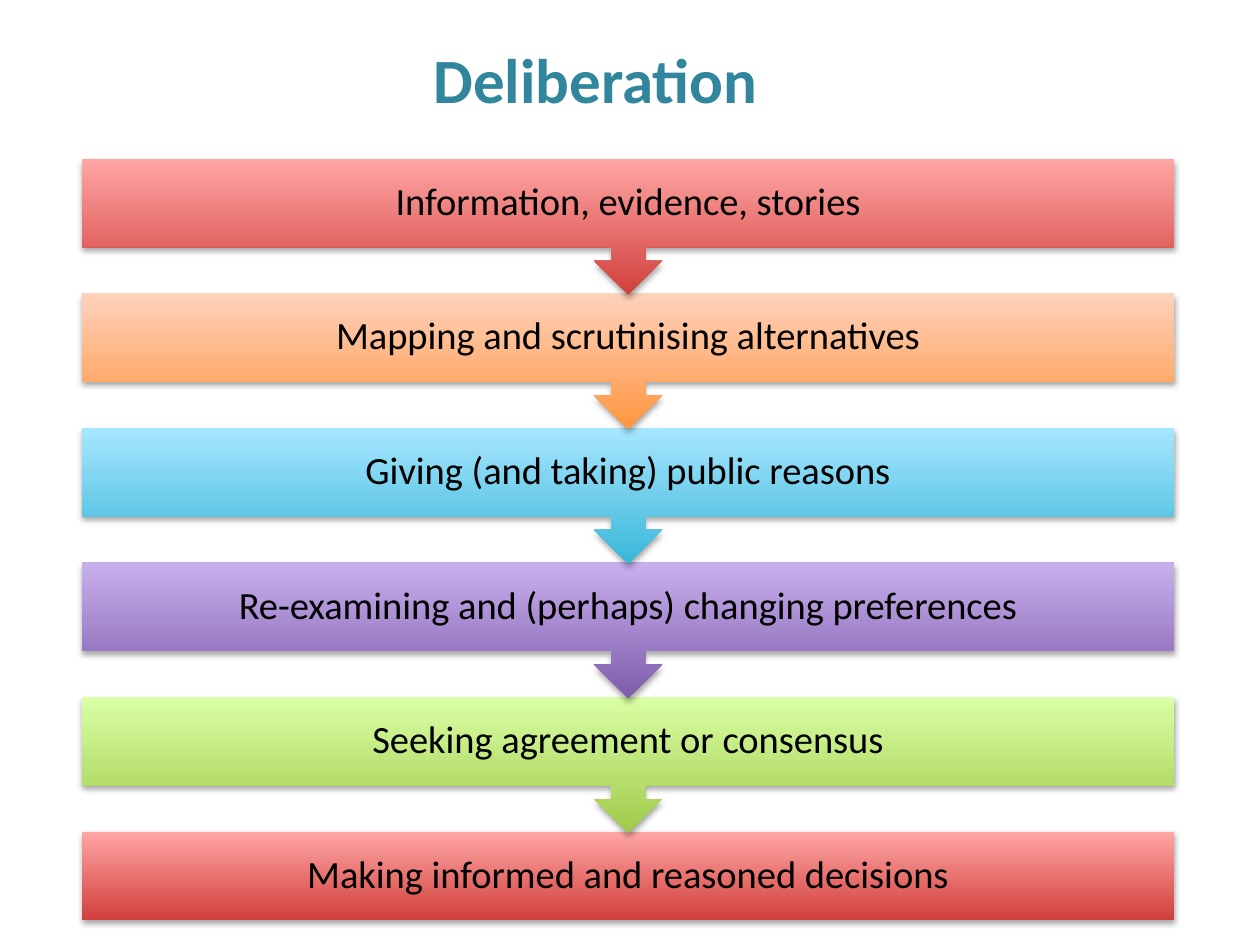
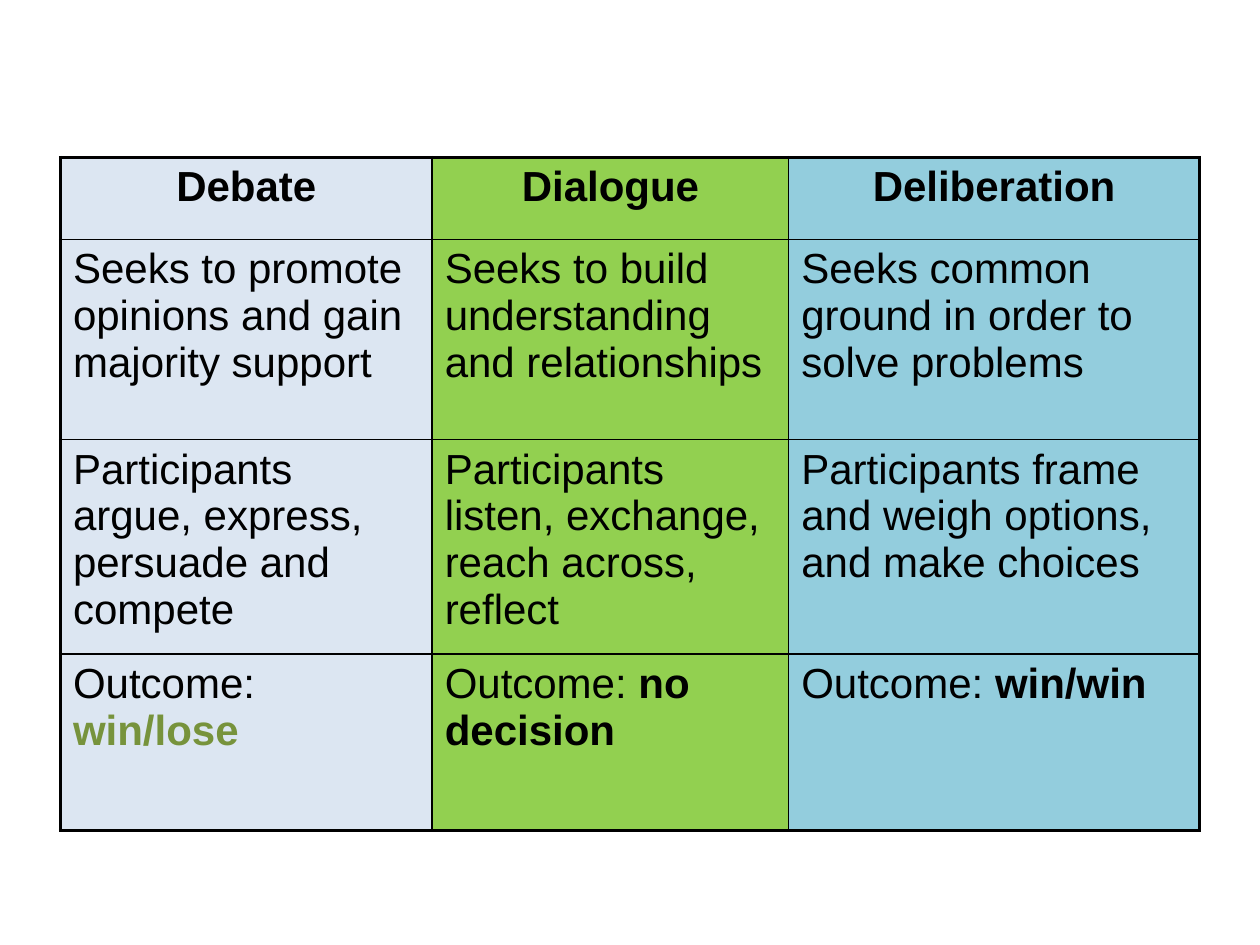
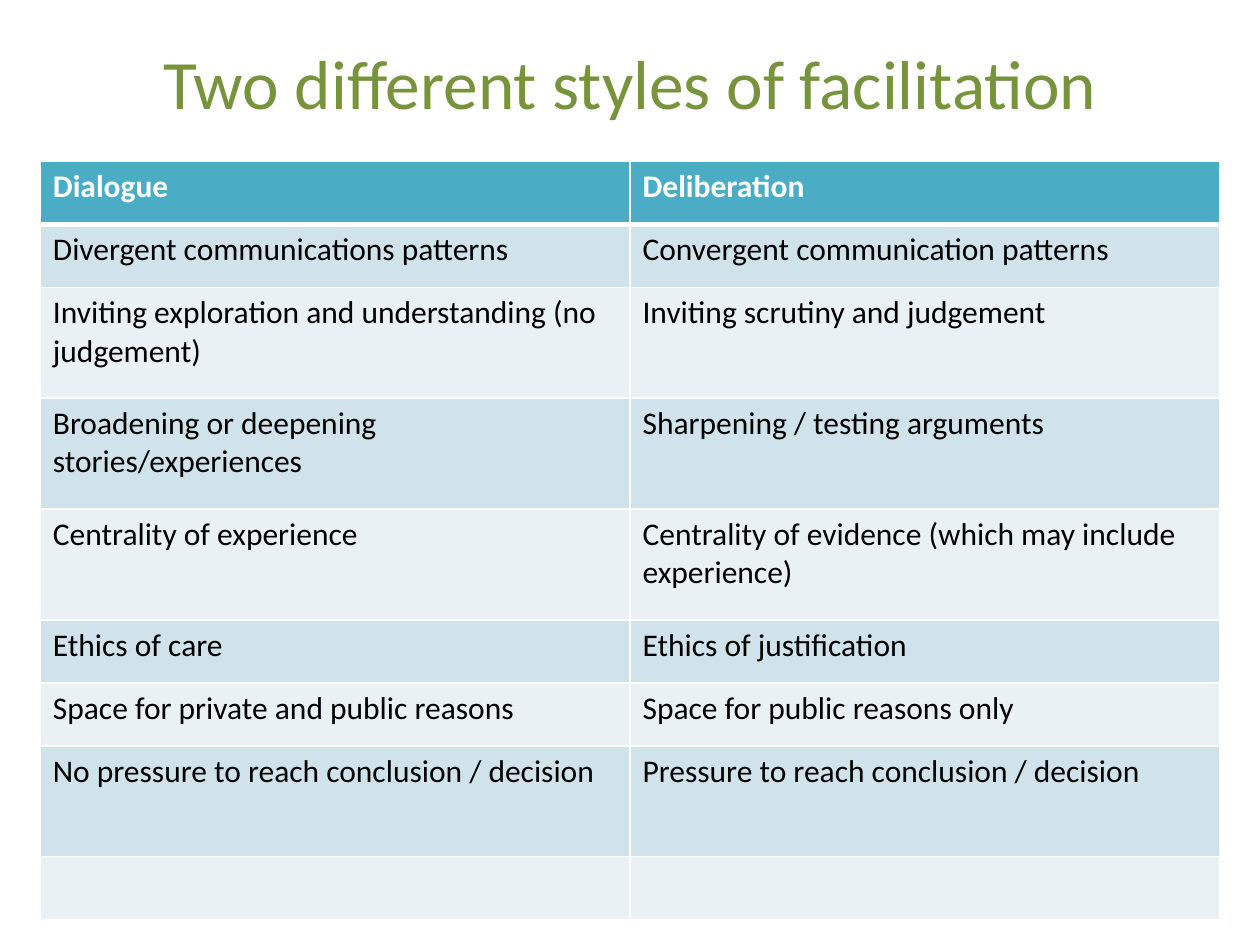
from dataclasses import dataclass

from lxml.etree import SubElement
from pptx import Presentation
from pptx.dml.color import RGBColor
from pptx.enum.shapes import MSO_SHAPE
from pptx.enum.text import MSO_ANCHOR, PP_ALIGN
from pptx.oxml import parse_xml
from pptx.oxml.ns import nsdecls, qn
from pptx.util import Inches, Pt


@dataclass(frozen=True)
class Theme:
    heading_font: str = "Calibri"
    table_font: str = "Arial"
    black: str = "000000"
    white: str = "FFFFFF"
    teal: str = "31859C"
    olive: str = "77933C"
    header: str = "4BACC6"
    band_dark: str = "D0E3EA"
    band_light: str = "E9F1F5"
    columns: tuple = ("DCE6F2", "92D050", "93CDDD")
    red: tuple = ("D1403C", "FFA6A5")
    orange: tuple = ("FF953E", "FFD2BD")
    blue: tuple = ("39B7D8", "A7E6FF")
    purple: tuple = ("7F5BAB", "C8B0ED")
    green: tuple = ("A0CA4A", "DAFFA5")
    title_size: float = 36
    large_title_size: float = 39.6
    step_size: float = 22
    comparison_size: float = 24
    styles_size: float = 18
    thin: float = 1
    frame: float = 2.25
    header_rule: float = 3


THEME = Theme()
GRID_COLUMNS, GRID_ROWS = 100, 75
STEP_PITCH, STEP_HEIGHT, CALLOUT_HEIGHT = 10.68, 7, 10.8

STEPS = [
    ("Information, evidence, stories", THEME.red),
    ("Mapping and scrutinising alternatives", THEME.orange),
    ("Giving (and taking) public reasons", THEME.blue),
    ("Re-examining and (perhaps) changing preferences", THEME.purple),
    ("Seeking agreement or consensus", THEME.green),
    ("Making informed and reasoned decisions", THEME.red),
]

COMPARISON = [
    ("Debate", "Dialogue", "Deliberation"),
    ("Seeks to promote opinions and gain majority support",
     "Seeks to build understanding and relationships",
     "Seeks common ground in order to solve problems"),
    ("Participants argue, express, persuade and compete",
     "Participants listen, exchange, reach across, reflect",
     "Participants frame and weigh options, and make choices"),
]
OUTCOMES = [("win/lose", THEME.olive), ("no decision", THEME.black),
            ("win/win", THEME.black)]

FACILITATION = [
    ("Dialogue", "Deliberation"),
    ("Divergent communications patterns", "Convergent communication patterns"),
    ("Inviting exploration and understanding (no judgement)",
     "Inviting scrutiny and judgement"),
    ("Broadening or deepening stories/experiences",
     "Sharpening / testing arguments"),
    ("Centrality of experience",
     "Centrality of evidence (which may include experience)"),
    ("Ethics of care", "Ethics of justification"),
    ("Space for private and public reasons", "Space for public reasons only"),
    ("No pressure to reach conclusion / decision",
     "Pressure to reach conclusion / decision"),
    ("", ""),
]


def apply_format(target, values):
    for name, value in values.items():
        setattr(target, name, value)


class DeckBuilder:
    def __init__(self, theme):
        self.theme = theme
        self.deck = Presentation()
        self.deck.slide_width, self.deck.slide_height = Inches(10), Inches(7.5)
        self.page = None

    def add_page(self):
        self.page = self.deck.slides.add_slide(self.deck.slide_layouts[6])

    def across(self, columns):
        return round(self.deck.slide_width * columns / GRID_COLUMNS)

    def down(self, rows):
        return round(self.deck.slide_height * rows / GRID_ROWS)

    def place(self, left, top, width, height):
        return (self.across(left), self.down(top),
                self.across(width), self.down(height))

    def fill_text(self, frame, spans, font, size, layout):
        """Fill the first paragraph with (text, colour, bold) spans."""
        para = frame.paragraphs[0]
        apply_format(para, layout)
        for text, color, bold in spans:
            span = para.add_run()
            span.text = text
            apply_format(span.font, {"name": font, "size": Pt(size), "bold": bold})
            span.font.color.rgb = RGBColor.from_string(color)

    def title(self, text, place, size, color, bold):
        box = self.page.shapes.add_textbox(*self.place(*place))
        apply_format(box.text_frame, {"word_wrap": True,
                                      "vertical_anchor": MSO_ANCHOR.MIDDLE})
        self.fill_text(box.text_frame, [(text, color, bold)],
                       self.theme.heading_font, size,
                       {"alignment": PP_ALIGN.CENTER})

    def step(self, text, colors, kind, place):
        box = self.page.shapes.add_shape(kind, *self.place(*place))
        box.line.fill.background()
        box.fill.gradient()
        box.fill.gradient_angle = 90
        for stop, color in zip(box.fill.gradient_stops, colors):
            stop.color.rgb = RGBColor.from_string(color)
        self.soft_shadow(box)
        inset = Inches(0.17)
        apply_format(box.text_frame, {
            "word_wrap": True, "vertical_anchor": MSO_ANCHOR.MIDDLE,
            "margin_left": inset, "margin_right": inset,
            "margin_top": inset, "margin_bottom": inset})
        size = self.theme.step_size
        self.fill_text(box.text_frame, [(text, self.theme.black, False)],
                       self.theme.heading_font, size,
                       {"alignment": PP_ALIGN.CENTER, "line_spacing": 0.9,
                        "space_after": Pt(size * 0.35)})

    def soft_shadow(self, box):
        box.shadow.inherit = False
        effects = box._element.spPr.find(qn("a:effectLst"))
        shadow = SubElement(effects, qn("a:outerShdw"), blurRad=str(Pt(3.1)),
                            dist=str(Pt(1.8)), dir="5400000", rotWithShape="0")
        color = SubElement(shadow, qn("a:srgbClr"), val=self.theme.black)
        SubElement(color, qn("a:alpha"), val="35000")

    def table(self, left, top, widths, heights):
        place = self.place(left, top, sum(widths), sum(heights))
        table = self.page.shapes.add_table(len(heights), len(widths), *place).table
        apply_format(table, {"first_row": False, "horz_banding": False})
        for column, width in zip(table.columns, widths):
            column.width = self.across(width)
        for row, height in zip(table.rows, heights):
            row.height = self.down(height)
        return table

    def cell(self, cell, fill, line_color, line_widths):
        """Set the fill and the left, right, top and bottom borders."""
        properties = cell._tc.get_or_add_tcPr()
        for side, width in zip("LRTB", line_widths):
            properties.append(parse_xml(
                f'<a:ln{side} {nsdecls("a")} w="{Pt(width)}"><a:solidFill>'
                f'<a:srgbClr val="{line_color}"/></a:solidFill></a:ln{side}>'))
        cell.fill.solid()
        cell.fill.fore_color.rgb = RGBColor.from_string(fill)


def build_deliberation(builder):
    builder.add_page()
    builder.title("Deliberation", (3.9, 0, 86.7, 12.5), THEME.title_size,
                  THEME.teal, True)
    last = len(STEPS) - 1
    for index, (text, colors) in reversed(list(enumerate(STEPS))):
        kind, height = MSO_SHAPE.DOWN_ARROW_CALLOUT, CALLOUT_HEIGHT
        if index == last:
            kind, height = MSO_SHAPE.RECTANGLE, STEP_HEIGHT
        builder.step(text, colors, kind,
                     (6.5, 12.6 + index * STEP_PITCH, 86.7, height))


def build_comparison(builder):
    builder.add_page()
    table = builder.table(4.8, 12.5, (29.5, 28.3, 32.6), (6.5, 15.9, 17, 14))
    rows = [[[(text, THEME.black, index == 0)] for text in row]
            for index, row in enumerate(COMPARISON)]
    rows.append([[("Outcome: ", THEME.black, False), (text, color, True)]
                 for text, color in OUTCOMES])
    for r, row in enumerate(rows):
        for c, spans in enumerate(row):
            cell = table.cell(r, c)
            on_edge = (c == 0, c == len(row) - 1, r == 0, r == len(rows) - 1)
            builder.cell(cell, THEME.columns[c], THEME.black,
                         [THEME.frame if edge else THEME.thin for edge in on_edge])
            builder.fill_text(cell.text_frame, spans, THEME.table_font,
                              THEME.comparison_size,
                              {"alignment": PP_ALIGN.LEFT if r else PP_ALIGN.CENTER,
                               "space_after": Pt(10)})


def build_facilitation(builder):
    builder.add_page()
    builder.title("Two different styles of facilitation", (5, 3, 90, 6.9),
                  THEME.large_title_size, THEME.olive, False)
    short, tall = 5, 8.8
    table = builder.table(3.2, 12.8, (46.8, 46.8),
                          (short, short, tall, tall, tall, short, short, tall, short))
    bands = (THEME.band_light, THEME.band_dark)
    for r, row in enumerate(FACILITATION):
        fill = bands[r % 2] if r else THEME.header
        color = THEME.black if r else THEME.white
        top = THEME.header_rule if r == 1 else THEME.thin
        bottom = THEME.thin if r else THEME.header_rule
        for c, text in enumerate(row):
            cell = table.cell(r, c)
            builder.cell(cell, fill, THEME.white,
                         (THEME.thin, THEME.thin, top, bottom))
            if text:
                builder.fill_text(cell.text_frame, [(text, color, r == 0)],
                                  THEME.heading_font, THEME.styles_size, {})


def main():
    builder = DeckBuilder(THEME)
    build_deliberation(builder)
    build_comparison(builder)
    build_facilitation(builder)
    builder.deck.save("out.pptx")


if __name__ == "__main__":
    main()
